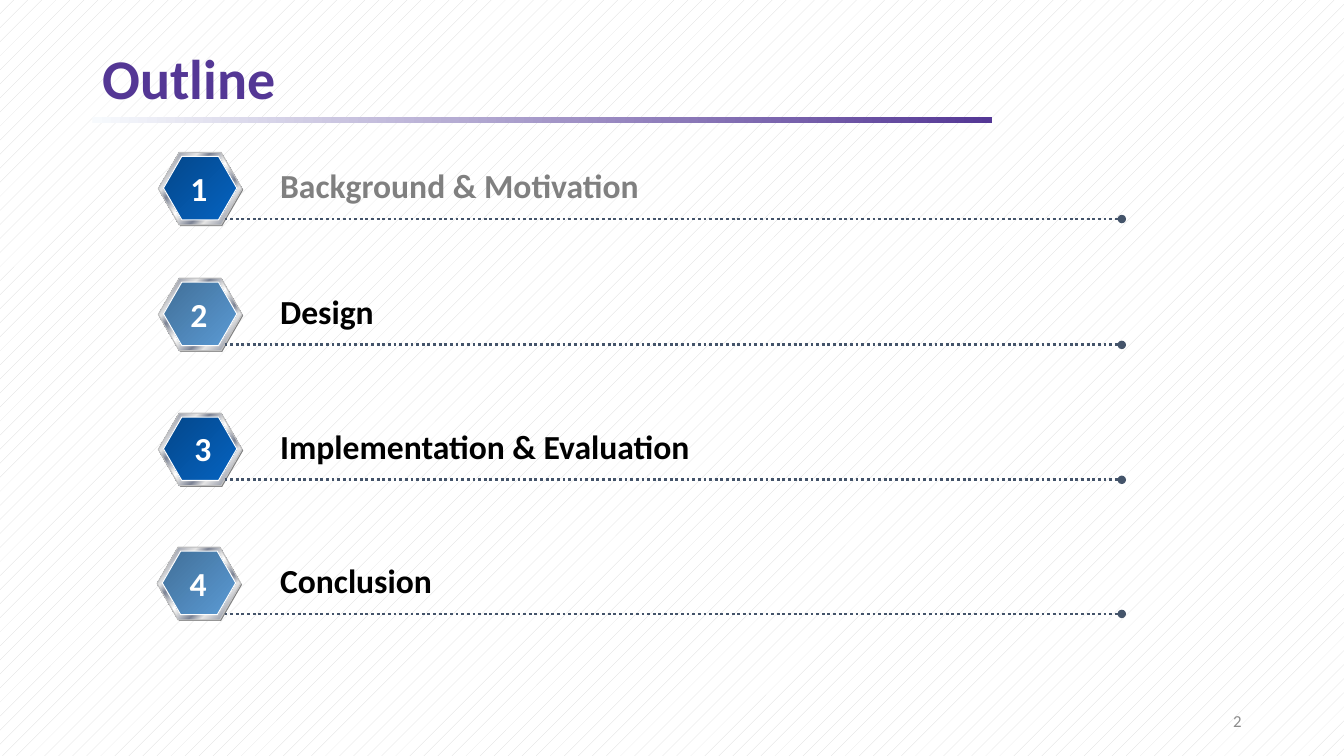
import lxml.etree
import pptx
import pptx.dml.color
import pptx.enum.dml
import pptx.enum.shapes
import pptx.enum.text
import pptx.oxml.ns
import pptx.util

Cm = pptx.util.Cm
Pt = pptx.util.Pt
qn = pptx.oxml.ns.qn
ALIGN = pptx.enum.text.PP_ALIGN
ANCHOR = pptx.enum.text.MSO_ANCHOR
SHAPE = pptx.enum.shapes.MSO_SHAPE

COLORS = {
    "purple": "543795", "pale": "F7FAFD", "white": "FFFFFF", "black": "000000",
    "gray": "808080", "page": "8C8C8C", "pattern": "D9D9D9", "rule": "44546A",
    "rim": "C0C0C0", "silver": "E6E6E6", "steel": "7D8496",
    "navy": "04478A", "blue": "0563C1", "slate": "416F98", "sky": "5B9BD5",
}
METAL = [(0, "silver"), (7, "steel"), (26, "silver"), (34, "steel"), (46, "silver"),
         (50, "white"), (54, "silver"), (66, "steel"), (74, "silver"), (93, "steel"),
         (100, "silver")]
DEEP = [(0, "navy"), (100, "blue")]
SOFT = [(0, "slate"), (100, "sky")]

# topic, topic colour, topic width, badge fill, badge left, badge top, number left
TOPICS = [
    ("Background & Motivation", "gray", 10.72, DEEP, 3.99, 3.84, 4.52),
    ("Design", "black", 3.23, SOFT, 3.99, 7.01, 4.52),
    ("Implementation & Evaluation", "black", 12.32, DEEP, 3.99, 10.41, 4.62),
    ("Conclusion", "black", 4.93, SOFT, 3.96, 13.79, 4.5),
]


def rgb(name):
    return pptx.dml.color.RGBColor.from_string(COLORS[name])


class OutlineSlide:
    font = "Calibri"

    def __init__(self, presentation):
        self.slide = presentation.slides.add_slide(presentation.slide_layouts[5])
        fill = self.slide.background.fill
        fill.patterned()
        fill.pattern = pptx.enum.dml.MSO_PATTERN.PERCENT_5
        fill.fore_color.rgb = rgb("pattern")
        fill.back_color.rgb = rgb("white")

    def set_text(self, paragraph, text, size, color, bold=True, align=ALIGN.LEFT):
        paragraph.text = text
        paragraph.alignment = align
        font = paragraph.font
        font.name, font.size, font.bold = self.font, Pt(size), bold
        font.color.rgb = rgb(color)

    def title(self, text, left, top, width, height):
        title = self.slide.shapes.title
        title.left, title.top = Cm(left), Cm(top)
        title.width, title.height = Cm(width), Cm(height)
        title.text_frame.vertical_anchor = ANCHOR.MIDDLE
        paragraph = title.text_frame.paragraphs[0]
        self.set_text(paragraph, text, 40, "purple")
        paragraph.line_spacing = 0.9

    def label(self, text, left, top, width, height, size=24, color="white",
              bold=True, align=ALIGN.LEFT, anchor=ANCHOR.TOP):
        box = self.slide.shapes.add_textbox(Cm(left), Cm(top), Cm(width), Cm(height))
        frame = box.text_frame
        frame.word_wrap = anchor != ANCHOR.TOP
        frame.vertical_anchor = anchor
        if anchor == ANCHOR.TOP:
            frame.auto_size = pptx.enum.text.MSO_AUTO_SIZE.SHAPE_TO_FIT_TEXT
        self.set_text(frame.paragraphs[0], text, size, color, bold, align)

    def gradient(self, shape, stops, angle):
        """Fill with (percent, colour) stops; the angle runs clockwise."""
        shape.fill.gradient()
        shape.fill.gradient_angle = -angle % 360
        stop_list = shape._element.spPr.find(qn("a:gradFill")).find(qn("a:gsLst"))
        for stop in list(stop_list):
            stop_list.remove(stop)
        for percent, color in stops:
            stop = lxml.etree.SubElement(stop_list, qn("a:gs"), pos=str(percent * 1000))
            lxml.etree.SubElement(stop, qn("a:srgbClr"), val=COLORS[color])

    def bar(self, left, top, width, height, stops):
        bar = self.slide.shapes.add_shape(
            SHAPE.RECTANGLE, Cm(left), Cm(top), Cm(width), Cm(height))
        bar.shadow.inherit = False
        bar.line.fill.background()
        self.gradient(bar, stops, 0)

    def hexagon(self, group, left, top, width, height, stops=None, outline=None):
        hexagon = group.shapes.add_shape(
            SHAPE.HEXAGON, Cm(left), Cm(top), Cm(width), Cm(height))
        hexagon.adjustments[0] = 0.289
        hexagon.shadow.inherit = False
        if stops:
            self.gradient(hexagon, stops, 45)
            hexagon.line.color.rgb = rgb(outline)
            hexagon.line.width = Pt(0.75)
        else:
            hexagon.fill.solid()
            hexagon.fill.fore_color.rgb = rgb("gray")
            hexagon.line.fill.background()

    def badge(self, left, top, stops):
        """Metal-rimmed hexagon: drop shade, rim and coloured core."""
        group = self.slide.shapes.add_group_shape()
        self.hexagon(group, left + 0.03, top + 0.03, 2.11, 1.83)
        self.hexagon(group, left, top, 2.11, 1.83, METAL, "rim")
        self.hexagon(group, left + 0.13, top + 0.1, 1.85, 1.6, stops, "white")

    def dotted_rule(self, left, right, y):
        rule = self.slide.shapes.add_connector(
            pptx.enum.shapes.MSO_CONNECTOR.STRAIGHT, Cm(left), Cm(y), Cm(right), Cm(y))
        rule.line.color.rgb = rgb("rule")
        rule.line.width = Pt(2)
        rule.line.dash_style = pptx.enum.dml.MSO_LINE.ROUND_DOT
        properties = rule._element.spPr
        lxml.etree.SubElement(properties.find(qn("a:ln")), qn("a:tailEnd"), type="oval")
        lxml.etree.SubElement(properties, qn("a:effectLst"))


def main():
    presentation = pptx.Presentation()
    presentation.slide_width = Cm(33.87)
    presentation.slide_height = Cm(19.05)
    outline = OutlineSlide(presentation)

    outline.title("Outline", 2.33, 1.09, 29.21, 1.9)
    outline.bar(2.33, 2.95, 22.66, 0.14, [(0, "pale"), (100, "purple")])
    outline.label("2", 23.92, 17.66, 7.62, 1.01, 12, "page", False,
                  ALIGN.RIGHT, ANCHOR.MIDDLE)

    for number, topic_row in enumerate(TOPICS, start=1):
        topic, color, width, stops, left, top, number_left = topic_row
        outline.badge(left, top, stops)
        outline.dotted_rule(5.66, 28.27, top + 1.68)
        outline.label(topic, 6.81, top + 0.2, width, 1.27, color=color)
        outline.label(str(number), number_left, top + 0.26, 0.99, 1.3,
                      align=ALIGN.CENTER)

    presentation.save("out.pptx")


if __name__ == "__main__":
    main()
